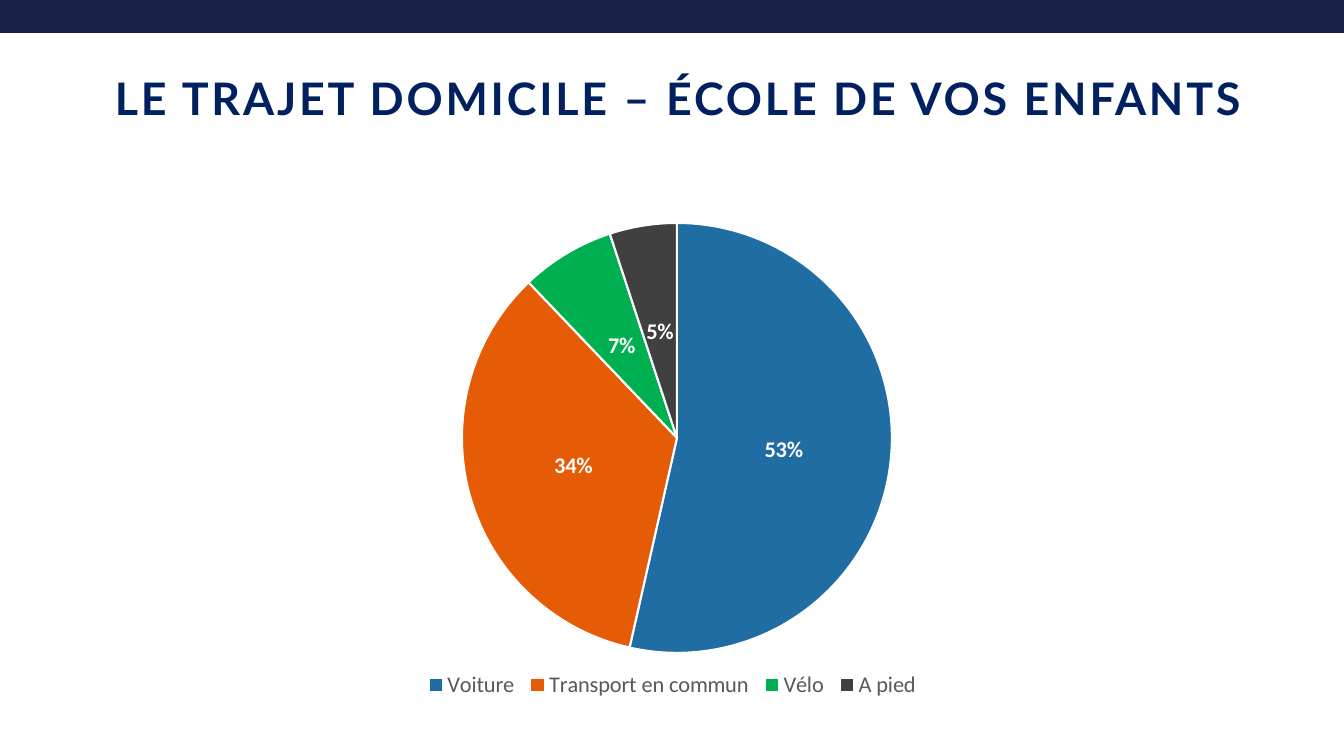
"""Build the slide on how children travel from home to school."""
from dataclasses import dataclass
from typing import NamedTuple

from lxml.etree import SubElement
from pptx import Presentation
from pptx.chart.data import CategoryChartData
from pptx.dml.color import RGBColor
from pptx.enum.chart import XL_CHART_TYPE as ChartType
from pptx.enum.chart import XL_LABEL_POSITION as LabelPosition
from pptx.enum.chart import XL_LEGEND_POSITION as LegendPosition
from pptx.enum.shapes import MSO_SHAPE as Preset
from pptx.enum.text import MSO_ANCHOR as Anchor
from pptx.enum.text import PP_ALIGN as Align
from pptx.oxml.ns import qn
from pptx.oxml.xmlchemy import BaseOxmlElement as Element
from pptx.slide import Slide
from pptx.util import Emu, Pt

PX_PER_INCH = 100.8


@dataclass(frozen=True)
class Theme:
    band: str = "182047"
    title: str = "002060"
    legend: str = "595959"
    white: str = "FFFFFF"
    title_font: str = "Lato"
    chart_font: str = "Calibri"
    title_size: int = 32
    chart_size: int = 16
    title_spacing: int = 200


class Area(NamedTuple):
    left: int
    top: int
    width: int
    height: int

    def emu(self) -> tuple[Emu, ...]:
        return tuple(px(length) for length in self)


class Slice(NamedTuple):
    name: str
    percent: int
    color: str


THEME = Theme()
PAGE = Area(0, 0, 1344, 756)
BAND = Area(0, 0, 1348, 32)
TITLE = Area(57, 33, 1243, 129)
CHART = Area(365, 209, 624, 503)
PIE = Area(462, 223, 430, 430)
LEGEND = Area(420, 668, 505, 34)
SLICES = (
    Slice("Voiture", 53, "206DA4"),
    Slice("Transport en commun", 34, "E65B06"),
    Slice("Vélo", 7, "00B050"),
    Slice("A pied", 5, "404040"),
)


def px(length: int) -> Emu:
    return Emu(round(length * 914400 / PX_PER_INCH))


def rgb(color: str) -> RGBColor:
    return RGBColor.from_string(color)


def add_band(page: Slide) -> None:
    band = page.shapes.add_shape(Preset.RECTANGLE, *BAND.emu())
    band.shadow.inherit = False
    band.fill.solid()
    band.fill.fore_color.rgb = rgb(THEME.band)
    band.line.color.rgb = rgb(THEME.band)
    band.line.width = Pt(1.25)


def add_title(page: Slide, text: str) -> None:
    frame = page.shapes.add_textbox(*TITLE.emu()).text_frame
    frame.word_wrap = True
    frame.vertical_anchor = Anchor.MIDDLE
    para = frame.paragraphs[0]
    para.alignment = Align.CENTER
    span = para.add_run()
    span.text = text
    font = para.font
    font.name, font.size, font.bold = THEME.title_font, Pt(THEME.title_size), True
    font.color.rgb = rgb(THEME.title)
    span.font._element.set("spc", str(THEME.title_spacing))


def place_part(part: Element, area: Area, index: int, target: str = "") -> None:
    for old in part.findall(qn("c:layout")):
        part.remove(old)
    layout = SubElement(part, qn("c:layout"))
    part.insert(index, layout)
    manual = SubElement(layout, qn("c:manualLayout"))
    settings = {"layoutTarget": target} if target else {}
    settings |= {
        "xMode": "edge",
        "yMode": "edge",
        "x": (area.left - CHART.left) / CHART.width,
        "y": (area.top - CHART.top) / CHART.height,
        "w": area.width / CHART.width,
        "h": area.height / CHART.height,
    }
    for tag, value in settings.items():
        SubElement(manual, qn(f"c:{tag}")).set("val", str(value))


def add_pie(page: Slide) -> None:
    data = CategoryChartData()
    data.categories = [part.name for part in SLICES]
    data.add_series("Series 1", [part.percent for part in SLICES])
    chart = page.shapes.add_chart(ChartType.PIE, *CHART.emu(), data).chart
    chart.has_title = False
    chart.font.name, chart.font.size = THEME.chart_font, Pt(THEME.chart_size)
    chart.font.color.rgb = rgb(THEME.legend)
    chart.has_legend = True
    chart.legend.position = LegendPosition.BOTTOM
    chart.legend.include_in_layout = False

    plot = chart.plots[0]
    plot.vary_by_categories = True
    for index, part in enumerate(SLICES):
        style = plot.series[0].points[index].format
        style.fill.solid()
        style.fill.fore_color.rgb = rgb(part.color)
        style.line.color.rgb = rgb(THEME.white)
        style.line.width = Pt(1.5)

    plot.has_data_labels = True
    labels = plot.data_labels
    labels.show_value = True
    labels.show_percentage = False
    labels.number_format = '0"%"'
    labels.number_format_is_linked = False
    labels.position = LabelPosition.CENTER
    labels.font.name, labels.font.size = THEME.chart_font, Pt(THEME.chart_size)
    labels.font.bold = True
    labels.font.color.rgb = rgb(THEME.white)
    place_part(chart._chartSpace.chart.plotArea, PIE, 0, "inner")
    place_part(chart.legend._element, LEGEND, 1)


def main() -> None:
    deck = Presentation()
    deck.slide_width, deck.slide_height = px(PAGE.width), px(PAGE.height)
    page = deck.slides.add_slide(deck.slide_layouts[6])
    add_band(page)
    add_pie(page)
    add_title(page, "LE TRAJET DOMICILE – ÉCOLE DE VOS ENFANTS")
    deck.save("out.pptx")


if __name__ == "__main__":
    main()
